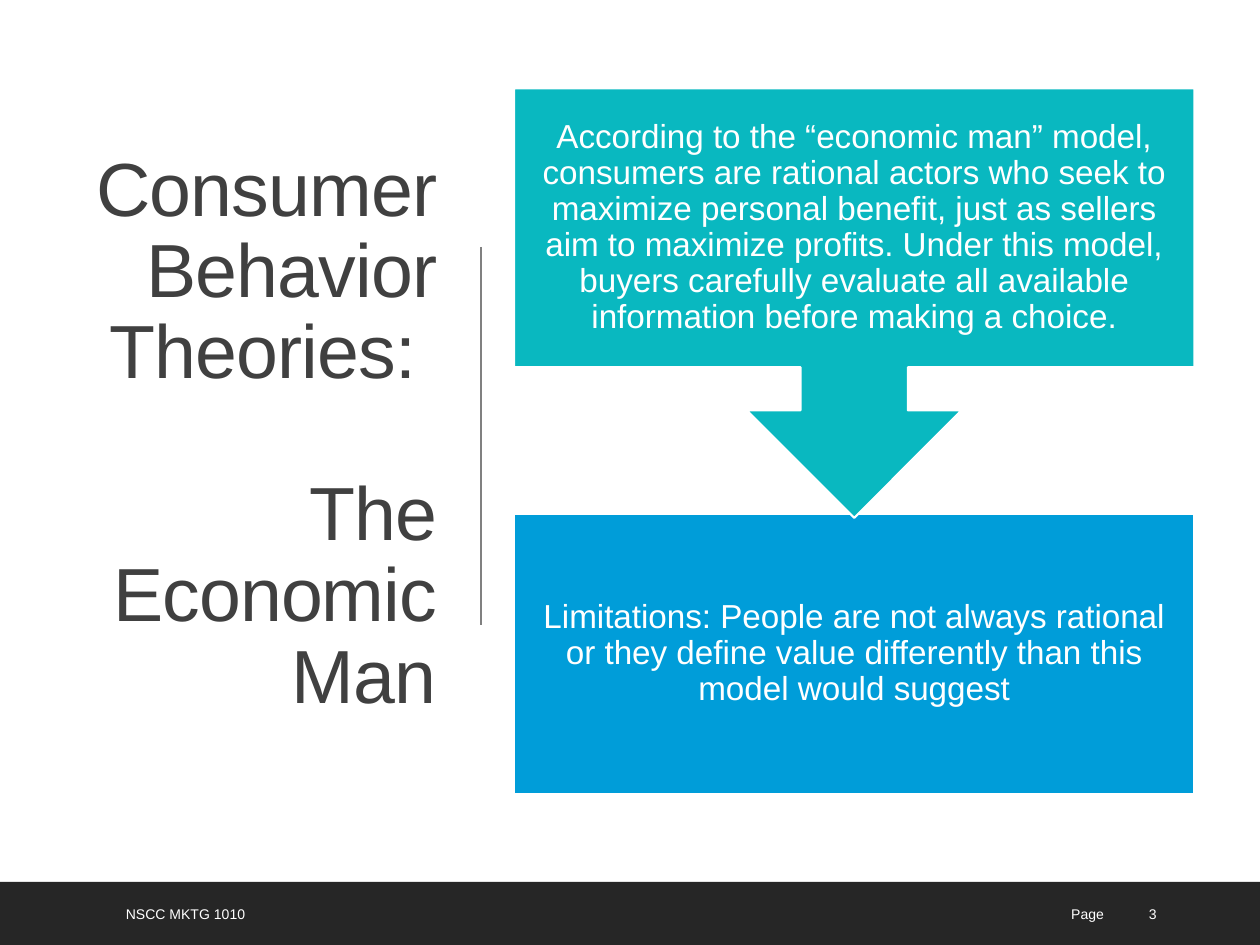
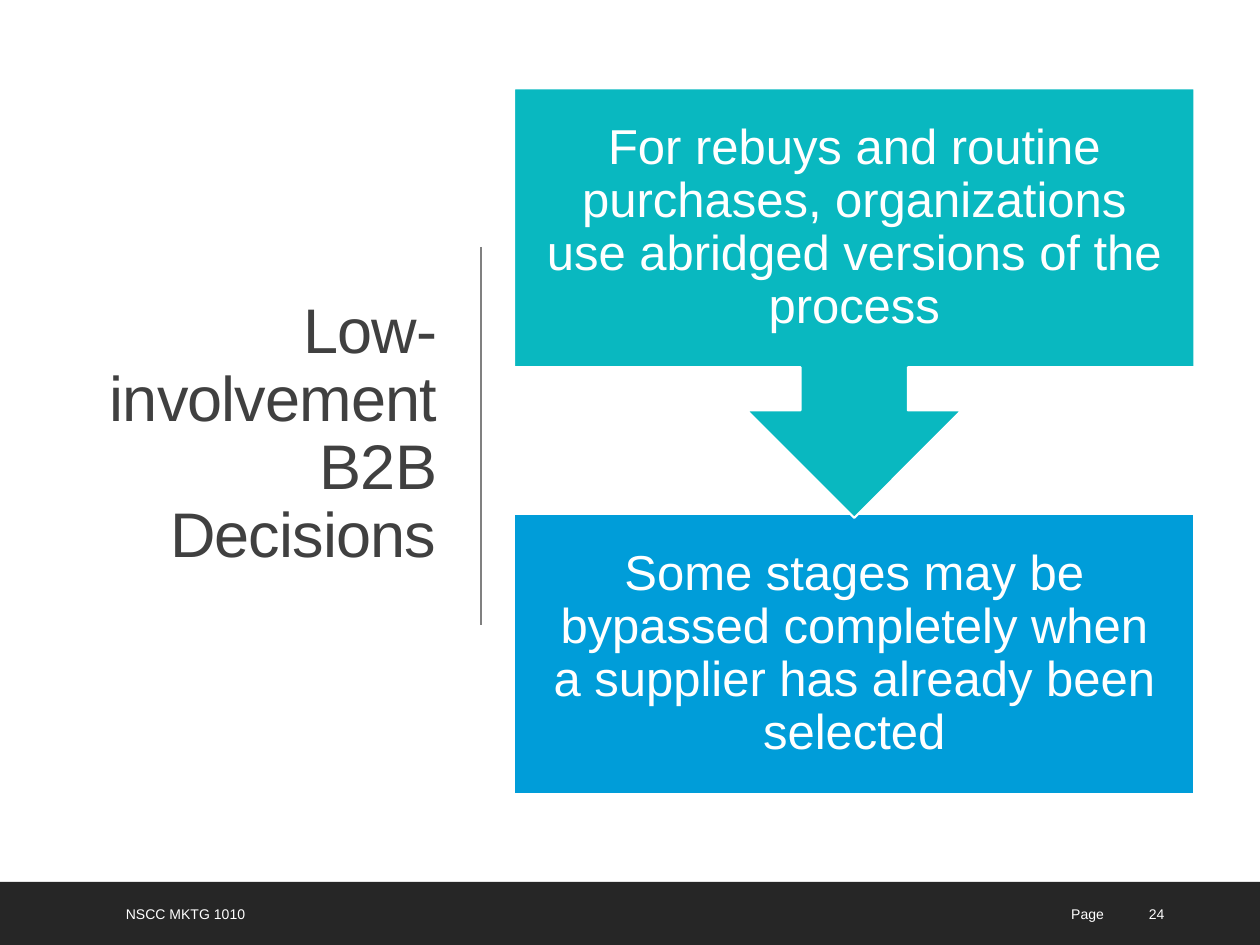
from dataclasses import dataclass
from typing import NamedTuple

from pptx import Presentation
from pptx.dml.color import RGBColor
from pptx.enum.shapes import MSO_CONNECTOR, MSO_SHAPE
from pptx.enum.text import MSO_ANCHOR as Anchor, PP_ALIGN as Align
from pptx.oxml.ns import qn
from pptx.util import Inches, Pt
from lxml.etree import SubElement

# Shared look
FONT = "Arial"
WHITE, TITLE, RULE, BAND = "FFFFFF", "404040", "808080", "262626"
TEAL, BLUE = "09B8C0", "009DD9"
WIDTH, HEIGHT = Inches(10), Inches(7.5)
COLS, ROWS = 100, 75


class Box(NamedTuple):
    """Left, top, width and height in grid columns and rows."""
    col: float
    row: float
    cols: float
    rows: float

    def emu(self) -> tuple[int, int, int, int]:
        cw, rh = WIDTH / COLS, HEIGHT / ROWS
        return (round(self.col * cw), round(self.row * rh),
                round(self.cols * cw), round(self.rows * rh))


@dataclass(frozen=True)
class Style:
    size: float
    color: str = WHITE
    align: Align = Align.LEFT
    leading: float = 1.0
    spacing: int = 0        # hundredths of a point between letters
    gap: float = 0          # points before each later paragraph
    inset: float | None = None


@dataclass(frozen=True)
class StepSlide:
    title: list[str]
    title_size: float
    premise: str
    consequence: str
    step_size: float
    step_inset: float
    page: int


# Places
TITLE_BOX = Box(5.3, 6.9, 30.3, 55.3)
RULE_BOX = Box(38.2, 19.6, 0, 30)
BAND_BOX = Box(0, 70, COLS, 5)
PREMISE_BOX = Box(40.8, 7, 54, 34.1)
CONSEQUENCE_BOX = Box(40.8, 40.8, 54, 22.2)
COURSE_BOX, PAGE_BOX, NUMBER_BOX = (
    Box(col, 70.5, cols, 4) for col, cols in ((9, 55.9), (67.4, 21.2), (90.2, 6.4)))

SLIDES = [
    StepSlide(
        ["Consumer Behavior Theories: ", "The Economic Man"], 43,
        "According to the “economic man” model, consumers are rational actors who "
        "seek to maximize personal benefit, just as sellers aim to maximize profits. "
        "Under this model, buyers carefully evaluate all available information "
        "before making a choice.",
        "Limitations: People are not always rational or they define value "
        "differently than this model would suggest",
        19, 0.15, 3),
    StepSlide(
        ["Low-involvement B2B Decisions"], 36,
        "For rebuys and routine purchases, organizations use abridged versions "
        "of the process",
        "Some stages may be bypassed completely when a supplier has already "
        "been selected",
        28, 0.22, 24),
]


def rgb(color: str) -> RGBColor:
    return RGBColor.from_string(color)


def write(sp, paragraphs: list[str], style: Style) -> None:
    tf = sp.text_frame
    tf.word_wrap = True
    tf.vertical_anchor = Anchor.MIDDLE
    if style.inset is not None:
        tf.margin_left = tf.margin_right = Inches(style.inset)
        tf.margin_top = tf.margin_bottom = Inches(style.inset)
    for i, text in enumerate(paragraphs):
        p = tf.add_paragraph() if i else tf.paragraphs[0]
        p.alignment, p.line_spacing = style.align, style.leading
        if i:
            p.space_before = Pt(style.gap)
        p.font.name, p.font.size = FONT, Pt(style.size)
        p.font.color.rgb = rgb(style.color)
        r = p.add_run()
        r.text = text
        if style.spacing:
            r._r.get_or_add_rPr().set("spc", str(style.spacing))


def add_text(s, box: Box, paragraphs: list[str], style: Style) -> None:
    write(s.shapes.add_textbox(*box.emu()), paragraphs, style)


def add_block(s, kind: MSO_SHAPE, box: Box, fill: str, outline: str | None = None):
    sp = s.shapes.add_shape(kind, *box.emu())
    sp.shadow.inherit = False
    sp.fill.solid()
    sp.fill.fore_color.rgb = rgb(fill)
    if outline:
        sp.line.color.rgb = rgb(outline)
        sp.line.width = Pt(1.25)
    else:
        sp.line.fill.background()
    return sp


def add_rule(s, box: Box) -> None:
    x, y, w, h = box.emu()
    line = s.shapes.add_connector(MSO_CONNECTOR.STRAIGHT, x, y, x + w, y + h)
    line.line.color.rgb = rgb(RULE)
    line.line.width = Pt(1)
    SubElement(line._element.spPr, qn("a:effectLst"))


def add_footer(s, page: int) -> None:
    add_block(s, MSO_SHAPE.RECTANGLE, BAND_BOX, BAND)
    add_text(s, PAGE_BOX, ["Page"], Style(8, align=Align.RIGHT))
    add_text(s, COURSE_BOX, ["NSCC MKTG 1010"], Style(8))
    add_text(s, NUMBER_BOX, [str(page)], Style(8))


def add_step_slide(prs, content: StepSlide) -> None:
    s = prs.slides.add_slide(prs.slide_layouts[6])
    s.background.fill.solid()
    s.background.fill.fore_color.rgb = rgb(WHITE)

    # Title and divider; the gap between title parts is one line
    size = content.title_size
    add_text(s, TITLE_BOX, content.title,
             Style(size, TITLE, Align.RIGHT, 0.9, -50, gap=round(size * 1.08)))
    add_rule(s, RULE_BOX)

    # Two steps, the first pointing down to the second
    step = Style(content.step_size, align=Align.CENTER, leading=0.9,
                 inset=content.step_inset)
    for kind, box, fill, text in (
            (MSO_SHAPE.RECTANGLE, CONSEQUENCE_BOX, BLUE, content.consequence),
            (MSO_SHAPE.DOWN_ARROW_CALLOUT, PREMISE_BOX, TEAL, content.premise)):
        write(add_block(s, kind, box, fill, WHITE), [text], step)

    add_footer(s, content.page)


def main() -> None:
    prs = Presentation()
    prs.slide_width, prs.slide_height = WIDTH, HEIGHT
    for content in SLIDES:
        add_step_slide(prs, content)
    prs.save("out.pptx")


if __name__ == "__main__":
    main()
